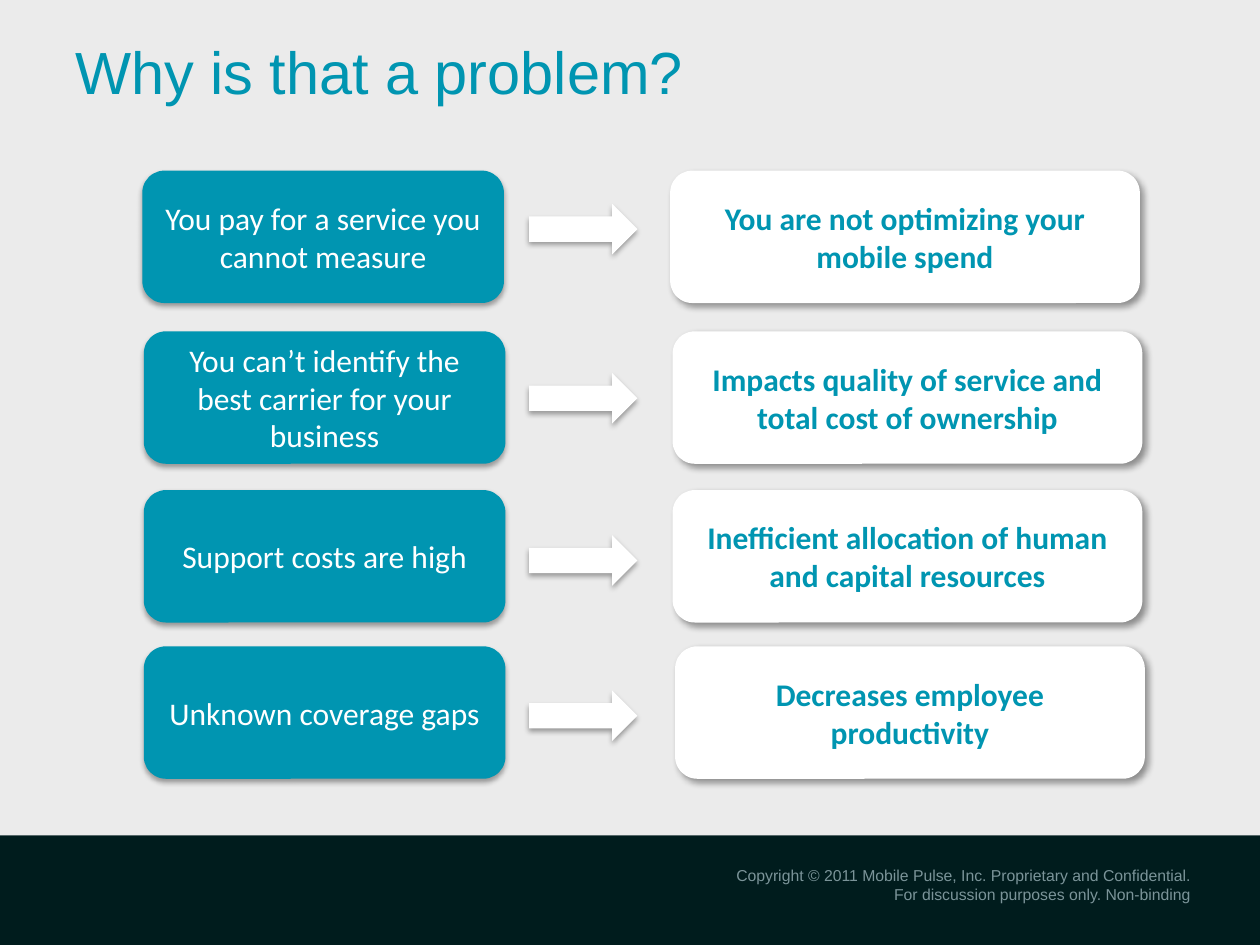
from lxml import etree
from pptx import Presentation
from pptx.dml.color import RGBColor
from pptx.enum.shapes import MSO_SHAPE
from pptx.enum.text import MSO_ANCHOR, PP_ALIGN
from pptx.oxml.ns import qn
from pptx.util import Cm, Pt

RECTANGLE = MSO_SHAPE.RECTANGLE
ROUNDED = MSO_SHAPE.ROUNDED_RECTANGLE
ARROW = MSO_SHAPE.RIGHT_ARROW
LEFT, CENTER, RIGHT = PP_ALIGN.LEFT, PP_ALIGN.CENTER, PP_ALIGN.RIGHT
MIDDLE, TOP = MSO_ANCHOR.MIDDLE, MSO_ANCHOR.TOP

COLORS = {
    "teal": "0095B1",
    "white": "FFFFFF",
    "page": "EBEBEB",
    "footer": "001C1D",
    "footer_text": "7B9499",
    "shadow": "000000",
}

# Opacity in percent, blur and distance in points, direction in degrees
SOFT_SHADOW = (35, 3.1, 1.8, 90)
CORNER_SHADOW = (40, 4, 3, 45)

PAGE_WIDTH, PAGE_HEIGHT, FOOTER_TOP = 25.4, 19.05, 16.84
CARD_HEIGHT = 2.67
CAUSE_WIDTH, EFFECT_WIDTH = 7.29, 9.47
ARROW_LEFT, ARROW_WIDTH, ARROW_HEIGHT = 7.79, 2.18, 1.02

# Row left and top, arrow drop and effect offset in cm, then cause and effect
ROWS = [
    (2.87, 3.44, 0.67, 10.64, "You pay for a service you cannot measure",
     "You are not optimizing your mobile spend"),
    (2.9, 6.68, 0.84, 10.66, "You can’t identify the best carrier for your business",
     "Impacts quality of service and total cost of ownership"),
    (2.9, 9.88, 0.91, 10.66, "Support costs are high",
     "Inefficient allocation of human and capital resources"),
    (2.9, 13.03, 0.89, 10.71, "Unknown coverage gaps",
     "Decreases employee productivity"),
]


def rgb(name):
    return RGBColor.from_string(COLORS[name])


def add_shadow(shape, opacity, blur, distance, direction):
    effects = shape._element.spPr.find(qn("a:effectLst"))
    shadow = etree.SubElement(
        effects, qn("a:outerShdw"), blurRad=str(Pt(blur)), dist=str(Pt(distance)),
        dir=str(direction * 60000), algn="ctr", rotWithShape="0")
    color = etree.SubElement(shadow, qn("a:srgbClr"), val=COLORS["shadow"])
    etree.SubElement(color, qn("a:alpha"), val=str(opacity * 1000))


def add_filled(page, kind, box, fill, shadow=None):
    shape = page.shapes.add_shape(kind, *map(Cm, box))
    shape.fill.solid()
    shape.fill.fore_color.rgb = rgb(fill)
    shape.line.fill.background()
    shape.shadow.inherit = False
    if shadow:
        add_shadow(shape, *shadow)
    return shape


def write(shape, lines, size, color, font, align, anchor=MIDDLE, bold=False):
    frame = shape.text_frame
    frame.word_wrap = True
    frame.vertical_anchor = anchor
    frame.text = "\n".join(lines)
    for para in frame.paragraphs:
        para.alignment = align
        para.font.size = Pt(size)
        para.font.name = font
        para.font.bold = bold
        para.font.color.rgb = rgb(color)


def add_title(page, box):
    title = page.shapes.add_textbox(*map(Cm, box))
    write(title, ["Why is that a problem?"], 34, "teal", "Arial", LEFT)


def add_footer(page, box):
    left, top, width, height = box
    add_filled(page, RECTANGLE, box, "footer")
    notice = page.shapes.add_textbox(
        Cm(left + 11.02), Cm(top + 0.48), Cm(13.23), Cm(1.02))
    write(notice, ["Copyright © 2011 Mobile Pulse, Inc. Proprietary and Confidential.",
                   "For discussion purposes only. Non-binding"],
          9, "footer_text", "Arial", RIGHT, TOP)


def add_row(page, left, top, arrow_drop, effect_offset, cause, effect):
    """Place a cause card, an arrow and an effect card from left to right."""
    add_filled(page, ARROW, (2.9 + ARROW_LEFT - 0.02, top + arrow_drop, ARROW_WIDTH,
                             ARROW_HEIGHT), "white", SOFT_SHADOW)
    cause_card = add_filled(page, ROUNDED, (left, top, CAUSE_WIDTH, CARD_HEIGHT),
                            "teal", SOFT_SHADOW)
    write(cause_card, [cause], 18, "white", "Calibri", CENTER)
    effect_card = add_filled(
        page, ROUNDED, (left + effect_offset, top, EFFECT_WIDTH, CARD_HEIGHT),
        "white", CORNER_SHADOW)
    write(effect_card, [effect], 18, "teal", "Calibri", CENTER, bold=True)


def main():
    deck = Presentation()
    deck.slide_width, deck.slide_height = Cm(PAGE_WIDTH), Cm(PAGE_HEIGHT)
    page = deck.slides.add_slide(deck.slide_layouts[6])
    add_filled(page, RECTANGLE, (0, 0, PAGE_WIDTH, FOOTER_TOP), "page")
    add_footer(page, (0, FOOTER_TOP, PAGE_WIDTH, PAGE_HEIGHT - FOOTER_TOP))
    add_title(page, (1.27, 0.41, 22.83, 2.03))
    for row in ROWS:
        add_row(page, *row)
    deck.save("out.pptx")


if __name__ == "__main__":
    main()
